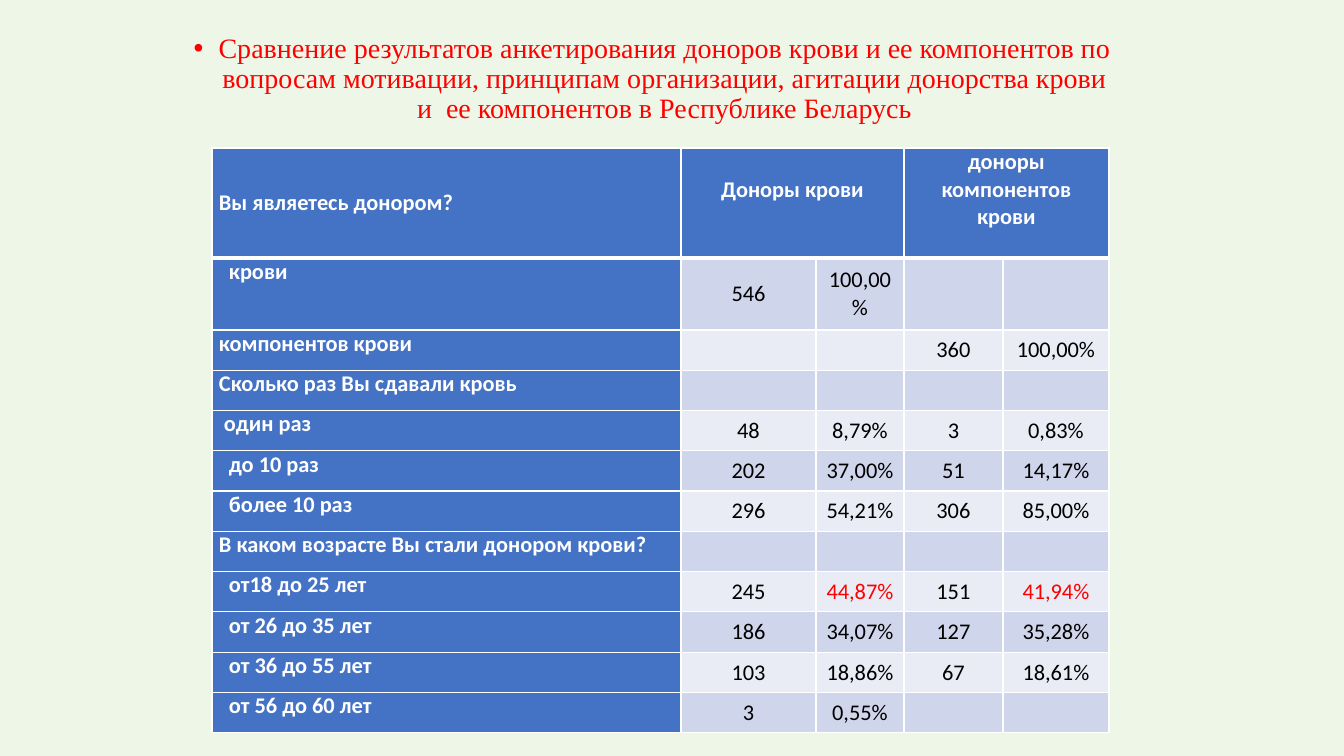
import pptx
import pptx.dml.color
import pptx.enum.text
import pptx.oxml
import pptx.oxml.ns
import pptx.util

PX = 914400 / 100.8
COLORS = {
    "background": "EEF6E8",
    "accent": "4472C4",
    "odd": "CFD5EA",
    "even": "E9EBF5",
    "white": "FFFFFF",
    "black": "000000",
    "red": "FF0000",
}
ALIGN = pptx.enum.text.PP_ALIGN
ANCHOR = pptx.enum.text.MSO_ANCHOR

HEADING = (
    "Сравнение результатов анкетирования доноров крови и ее компонентов по "
    "вопросам мотивации, принципам организации, агитации донорства крови "
    "и  ее компонентов в Республике Беларусь"
)
TABLE_LEFT, TABLE_TOP, TABLE_HEIGHT = 212, 148, 585
COLUMN_WIDTHS = [469, 135, 88, 99, 106]
HEADER_HEIGHT, FIRST_ROW_HEIGHT = 110, 72
CELL_MARGIN, HEADER_MARGIN, HEADER_BOTTOM = 7, 14, 27

# Label indent, then the five cell texts
ROWS = [
    (0, "Вы являетесь донором?", "Доноры крови", "", "доноры компонентов крови", ""),
    (10, "крови", "546", "100,00%", "", ""),
    (0, "компонентов крови", "", "", "360", "100,00%"),
    (0, "Сколько раз Вы сдавали кровь", "", "", "", ""),
    (5, "один раз", "48", "8,79%", "3", "0,83%"),
    (10, "до 10 раз", "202", "37,00%", "51", "14,17%"),
    (10, "более 10 раз", "296", "54,21%", "306", "85,00%"),
    (0, "В каком возрасте Вы стали донором крови?", "", "", "", ""),
    (10, "от18 до 25 лет", "245", "44,87%", "151", "41,94%"),
    (10, "от 26 до 35 лет", "186", "34,07%", "127", "35,28%"),
    (10, "от 36 до 55 лет", "103", "18,86%", "67", "18,61%"),
    (10, "от 56 до 60 лет", "3", "0,55%", "", ""),
]
HIGHLIGHTS = {"44,87%", "41,94%"}


def px(n):
    return pptx.util.Emu(round(n * PX))


def rgb(name):
    return pptx.dml.color.RGBColor.from_string(COLORS[name])


prs = pptx.Presentation()
prs.slide_width, prs.slide_height = px(1344), px(756)
s = prs.slides.add_slide(prs.slide_layouts[1])
s.background.fill.solid()
s.background.fill.fore_color.rgb = rgb("background")

# Heading in the body placeholder
title = s.shapes.title
title._element.getparent().remove(title._element)
body = s.placeholders[1]
for name, n in {"left": 179, "top": 29, "width": 946, "height": 666}.items():
    setattr(body, name, px(n))
p = body.text_frame.paragraphs[0]
for name, value in {
    "alignment": ALIGN.CENTER,
    "line_spacing": 0.9,
    "space_before": pptx.util.Pt(10),
}.items():
    setattr(p, name, value)
pPr = p._p.get_or_add_pPr()
pPr.set("marL", str(px(25)))
pPr.set("indent", str(-px(25)))
r = p.add_run()
r.text = HEADING
r.font.name = "Times New Roman"
r.font.size = pptx.util.Pt(20)
r.font.color.rgb = rgb("red")

# Survey table
table = s.shapes.add_table(
    len(ROWS), len(COLUMN_WIDTHS), px(TABLE_LEFT), px(TABLE_TOP),
    px(sum(COLUMN_WIDTHS)), px(TABLE_HEIGHT),
).table
for column, width in zip(table.columns, COLUMN_WIDTHS):
    column.width = px(width)
row_height = (TABLE_HEIGHT - HEADER_HEIGHT - FIRST_ROW_HEIGHT) / (len(ROWS) - 2)
heights = [HEADER_HEIGHT, FIRST_ROW_HEIGHT] + [row_height] * (len(ROWS) - 2)
for row, height in zip(table.rows, heights):
    row.height = px(height)
for first in (1, 3):
    table.cell(0, first).merge(table.cell(0, first + 1))

for i, (indent, *texts) in enumerate(ROWS):
    for j, text in enumerate(texts):
        cell = table.cell(i, j)
        is_header, is_label = i == 0, j == 0
        is_group = is_header and not is_label
        side = HEADER_MARGIN if is_group else CELL_MARGIN
        for name, value in {
            "margin_left": px(side + (indent if is_label else 0)),
            "margin_right": px(side),
            "margin_top": 0,
            "margin_bottom": px(HEADER_BOTTOM if is_group else 0),
            "vertical_anchor": ANCHOR.TOP if is_label and not is_header else ANCHOR.MIDDLE,
        }.items():
            setattr(cell, name, value)

        tcPr = cell._tc.get_or_add_tcPr()
        for edge in "LRTB":
            thick = (i, edge) in ((0, "B"), (1, "T"))
            tcPr.append(pptx.oxml.parse_xml(
                f'<a:ln{edge} {pptx.oxml.ns.nsdecls("a")} w="{38100 if thick else 12700}">'
                f'<a:solidFill><a:srgbClr val="{COLORS["white"]}"/></a:solidFill></a:ln{edge}>'
            ))
        cell.fill.solid()
        band = "odd" if i % 2 else "even"
        cell.fill.fore_color.rgb = rgb("accent" if is_header or is_label else band)

        if not text:
            continue
        p = cell.text_frame.paragraphs[0]
        p.alignment = ALIGN.LEFT if is_label else ALIGN.CENTER
        r = p.add_run()
        r.text = text
        for name, value in {
            "name": "Calibri",
            "size": pptx.util.Pt(16),
            "bold": is_header or is_label,
        }.items():
            setattr(r.font, name, value)
        value_color = "red" if text in HIGHLIGHTS else "black"
        r.font.color.rgb = rgb("white" if is_header or is_label else value_color)

prs.save("out.pptx")
